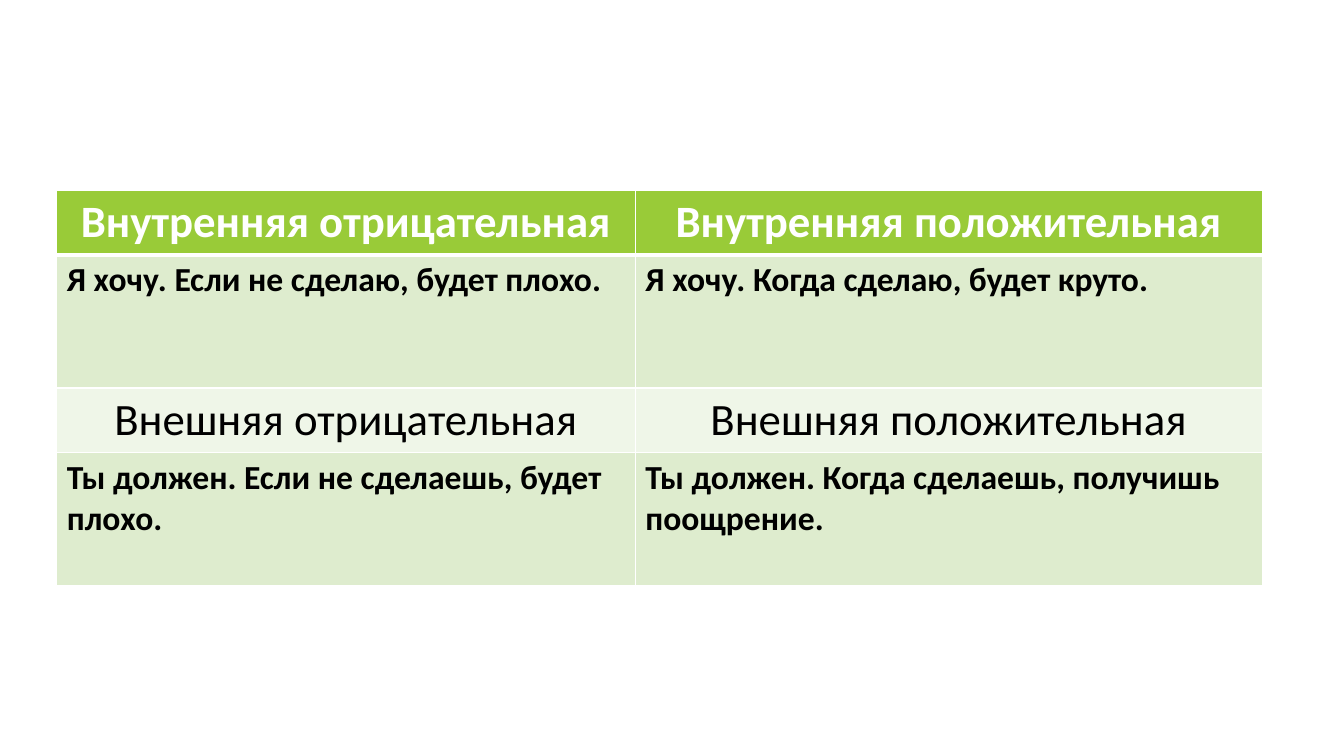
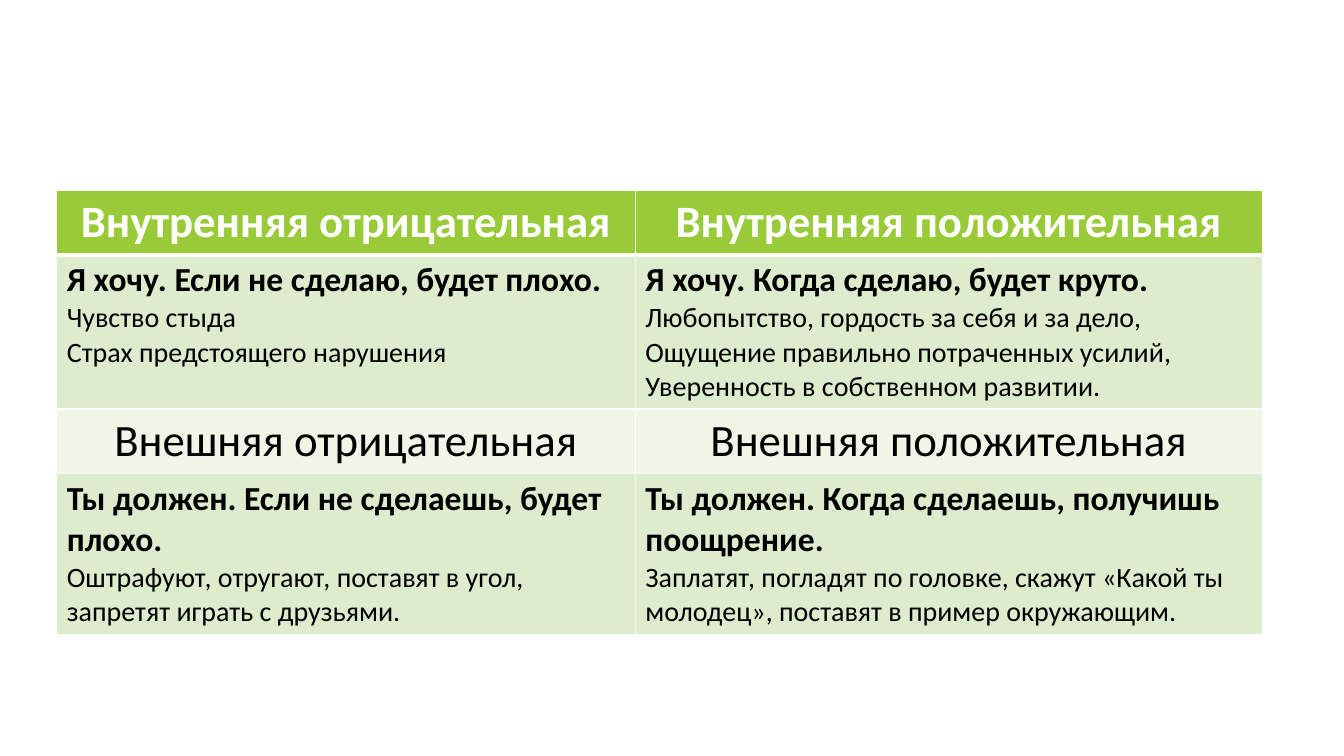
from lxml import etree
from pptx import Presentation
from pptx.dml.color import RGBColor
from pptx.enum.text import PP_ALIGN
from pptx.oxml.ns import qn
from pptx.util import Cm, Pt

LEFT = PP_ALIGN.LEFT
CENTER = PP_ALIGN.CENTER
BLANK_LAYOUT = 6

FONT = "Calibri"
WHITE, BLACK = "FFFFFF", "000000"
GREEN, PALE_GREEN, FAINT_GREEN = "99CB38", "DEECCE", "EFF6E8"

COLUMN_WIDTHS = (14.58, 15.8)
HEADING_HEIGHT = 1.63

INNER_HEADINGS = ("Внутренняя отрицательная", "Внутренняя положительная")
OUTER_HEADINGS = ("Внешняя отрицательная", "Внешняя положительная")
INNER_MOTTOS = ("Я хочу. Если не сделаю, будет плохо.",
                "Я хочу. Когда сделаю, будет круто.")
OUTER_MOTTOS = ("Ты должен. Если не сделаешь, будет плохо.",
                "Ты должен. Когда сделаешь, получишь поощрение.")

NO_DETAILS = ((), ())
INNER_DETAILS = (
    ("Чувство стыда", "Страх предстоящего нарушения"),
    ("Любопытство, гордость за себя и за дело,",
     "Ощущение правильно потраченных усилий,",
     "Уверенность в собственном развитии."),
)
OUTER_DETAILS = (
    ("Оштрафуют, отругают, поставят в угол, запретят играть с друзьями.",),
    ("Заплатят, погладят по головке, скажут «Какой ты молодец», "
     "поставят в пример окружающим.",),
)


def color(value):
    return RGBColor.from_string(value)


def write(paragraph, text, size=20, bold=False, fill=BLACK, align=LEFT):
    """Put formatted text into a paragraph."""
    paragraph.alignment = align
    run = paragraph.add_run()
    run.text = text
    run.font.name = FONT
    run.font.size = Pt(size)
    run.font.bold = bold
    run.font.color.rgb = color(fill)


def set_borders(cell, top=1, bottom=1):
    """Draw white borders; call before the cell fill is set."""
    properties = cell._tc.get_or_add_tcPr()
    for side, width in (("L", 1), ("R", 1), ("T", top), ("B", bottom)):
        line = etree.SubElement(properties, qn(f"a:ln{side}"), w=str(Pt(width)))
        solid = etree.SubElement(line, qn("a:solidFill"))
        etree.SubElement(solid, qn("a:srgbClr"), val=WHITE)


class Deck:
    def __init__(self):
        self.presentation = Presentation()
        self.presentation.slide_width = Cm(33.87)
        self.presentation.slide_height = Cm(19.05)
        self.slide = None

    def add_slide(self):
        layout = self.presentation.slide_layouts[BLANK_LAYOUT]
        self.slide = self.presentation.slides.add_slide(layout)

    def add_table(self, row_heights):
        table = self.slide.shapes.add_table(
            len(row_heights), len(COLUMN_WIDTHS), Cm(1.43), Cm(4.79),
            Cm(sum(COLUMN_WIDTHS)), Cm(sum(row_heights))).table
        for column, width in zip(table.columns, COLUMN_WIDTHS):
            column.width = Cm(width)
        for row, height in zip(table.rows, row_heights):
            row.height = Cm(height)
        return table

    def style_cell(self, cell, fill, **borders):
        set_borders(cell, **borders)
        cell.fill.solid()
        cell.fill.fore_color.rgb = color(fill)

    def heading_row(self, row, headings, fill, text_fill, bold, **borders):
        for cell, heading in zip(row.cells, headings):
            self.style_cell(cell, fill, **borders)
            write(cell.text_frame.paragraphs[0], heading, size=32, bold=bold,
                  fill=text_fill, align=CENTER)

    def body_row(self, row, mottos, details, **borders):
        for cell, motto, lines in zip(row.cells, mottos, details):
            self.style_cell(cell, PALE_GREEN, **borders)
            frame = cell.text_frame
            write(frame.paragraphs[0], motto, size=24, bold=True)
            for line in lines:
                write(frame.add_paragraph(), line)

    def motivation_slide(self, inner_details, outer_details, body_heights):
        """Add a slide with the four kinds of motivation."""
        self.add_slide()
        inner_height, outer_height = body_heights
        rows = self.add_table((HEADING_HEIGHT, inner_height,
                               HEADING_HEIGHT, outer_height)).rows
        self.heading_row(rows[0], INNER_HEADINGS, GREEN, WHITE, True, bottom=3)
        self.body_row(rows[1], INNER_MOTTOS, inner_details, top=3)
        self.heading_row(rows[2], OUTER_HEADINGS, FAINT_GREEN, BLACK, False)
        self.body_row(rows[3], OUTER_MOTTOS, outer_details)


def main():
    deck = Deck()
    # Mottos only
    deck.motivation_slide(NO_DETAILS, NO_DETAILS, (3.35, 3.35))
    # Mottos with examples
    deck.motivation_slide(INNER_DETAILS, OUTER_DETAILS, (3.88, 4.03))
    deck.presentation.save("out.pptx")


if __name__ == "__main__":
    main()
